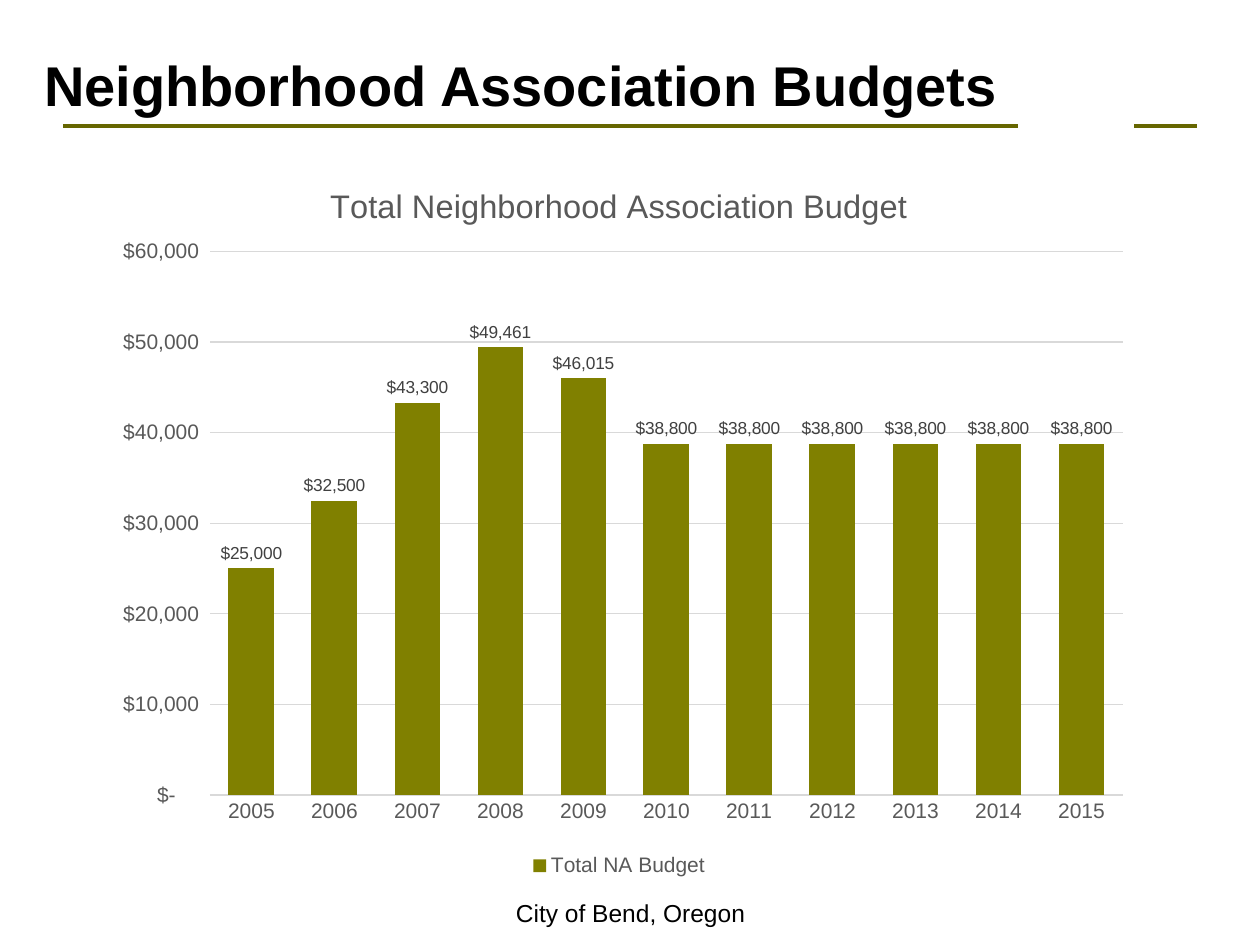
from lxml.etree import SubElement
from pptx import Presentation
from pptx.chart.data import CategoryChartData
from pptx.dml.color import RGBColor
from pptx.enum.chart import XL_CHART_TYPE, XL_LABEL_POSITION, XL_LEGEND_POSITION, XL_TICK_MARK
from pptx.enum.shapes import MSO_CONNECTOR
from pptx.enum.text import MSO_ANCHOR, PP_ALIGN
from pptx.oxml import parse_xml
from pptx.oxml.ns import nsdecls, qn
from pptx.util import Inches, Pt

BLACK = RGBColor(0x00, 0x00, 0x00)
RULE_GREEN = RGBColor(0x66, 0x66, 0x00)
OLIVE = RGBColor(0x80, 0x80, 0x00)
GRAY = RGBColor(0x59, 0x59, 0x59)
LABEL_GRAY = RGBColor(0x40, 0x40, 0x40)
GRID_GRAY = RGBColor(0xD9, 0xD9, 0xD9)
ACCOUNTING = '_("$"* #,##0_);_("$"* \\(#,##0\\);_("$"* "-"??_);_(@_)'


def set_font(font, size, color, bold=False):
    font.name = "Arial"
    font.size = Pt(size)
    font.bold = bold
    font.color.rgb = color


prs = Presentation()
prs.slide_width, prs.slide_height = Inches(10), Inches(7.5)
slide = prs.slides.add_slide(prs.slide_layouts[5])

# Broken rule under the title
for start, end in ((0.5, 8.08), (9, 9.5)):
    rule = slide.shapes.add_connector(
        MSO_CONNECTOR.STRAIGHT, Inches(start), Inches(1), Inches(end), Inches(1))
    rule.line.color.rgb = RULE_GREEN
    rule.line.width = Pt(2)
    SubElement(rule.element.spPr, qn("a:effectLst"))

# Title and footer
title = slide.shapes.title
title.left, title.top = Inches(0.25), Inches(0.33)
title.width, title.height = Inches(9), Inches(0.67)
title.text_frame.text = "Neighborhood Association Budgets"
title.text_frame.vertical_anchor = MSO_ANCHOR.MIDDLE
heading = title.text_frame.paragraphs[0]
heading.alignment = PP_ALIGN.LEFT
set_font(heading.font, 32, BLACK, bold=True)

footer = slide.shapes.add_textbox(Inches(3.42), Inches(7.08), Inches(3.17), Inches(0.52))
footer.text_frame.word_wrap = True
footer.text_frame.text = "City of Bend, Oregon"
city = footer.text_frame.paragraphs[0]
city.alignment = PP_ALIGN.CENTER
set_font(city.font, 14, BLACK)

# Budget chart
budgets = CategoryChartData(number_format=ACCOUNTING)
budgets.categories = [str(year) for year in range(2005, 2016)]
budgets.add_series("Total NA Budget", [25000, 32500, 43300, 49461, 46015] + [38800] * 6)
chart = slide.shapes.add_chart(
    XL_CHART_TYPE.COLUMN_CLUSTERED,
    Inches(0.75), Inches(1.25), Inches(8.33), Inches(5.75), budgets).chart
set_font(chart.font, 10, BLACK)

chart.has_title = True
chart.chart_title.include_in_layout = False
chart.chart_title.text_frame.text = "Total Neighborhood Association Budget"
set_font(chart.chart_title.text_frame.paragraphs[0].font, 18.6, GRAY)

chart.has_legend = True
chart.legend.position = XL_LEGEND_POSITION.BOTTOM
chart.legend.include_in_layout = False
set_font(chart.legend.font, 12, GRAY)

for axis in (chart.category_axis, chart.value_axis):
    axis.major_tick_mark = axis.minor_tick_mark = XL_TICK_MARK.NONE
    set_font(axis.tick_labels.font, 12, GRAY)
chart.value_axis.minimum_scale = 0
chart.value_axis.maximum_scale = 60000
chart.value_axis.major_unit = 10000
chart.value_axis.tick_labels.number_format = ACCOUNTING
chart.value_axis.tick_labels.number_format_is_linked = False
chart.value_axis.format.line.fill.background()
for line in (chart.category_axis.format.line, chart.value_axis.major_gridlines.format.line):
    line.color.rgb = GRID_GRAY
    line.width = Pt(0.75)

plot = chart.plots[0]
plot.gap_width = 81
plot.overlap = -27
plot.vary_by_categories = False
bars = plot.series[0]
bars.format.fill.solid()
bars.format.fill.fore_color.rgb = OLIVE
labels = bars.data_labels
labels.show_value = True
labels.position = XL_LABEL_POSITION.OUTSIDE_END
labels.number_format = '"$"#,##0'
labels.number_format_is_linked = False
set_font(labels.font, 9.9, LABEL_GRAY)

# Fixed inner plot area, as fractions of the chart
plot_area = chart.element.find(".//" + qn("c:plotArea"))
for automatic in plot_area.findall(qn("c:layout")):
    plot_area.remove(automatic)
fractions = "".join(f'<c:{side} val="{value}"/>' for side, value in
                    (("x", 0.11), ("y", 0.13), ("w", 0.87), ("h", 0.75)))
plot_area.insert(0, parse_xml(
    f'<c:layout {nsdecls("c")}><c:manualLayout><c:layoutTarget val="inner"/>'
    f'<c:xMode val="edge"/><c:yMode val="edge"/>{fractions}</c:manualLayout></c:layout>'))

prs.save("out.pptx")
